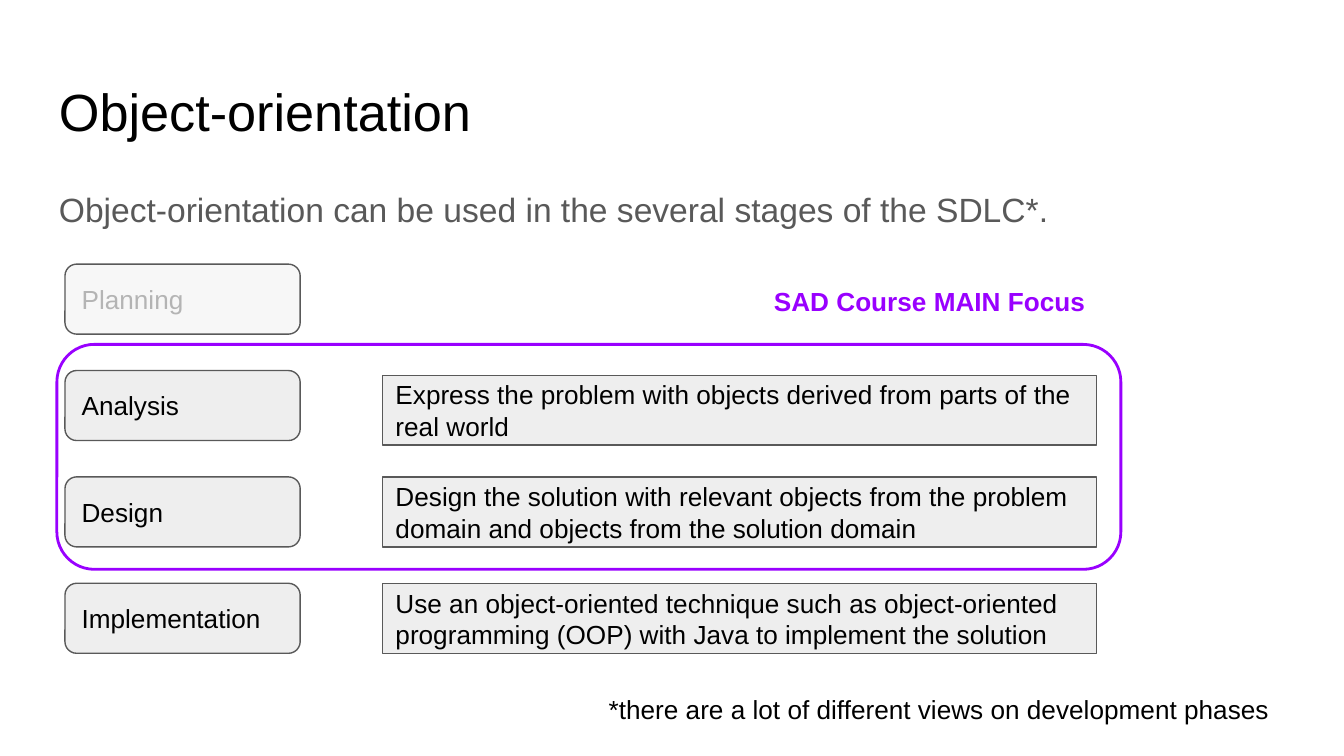
from lxml.etree import SubElement
from pptx import Presentation
from pptx.dml.color import RGBColor
from pptx.enum.shapes import MSO_SHAPE
from pptx.enum.text import MSO_ANCHOR
from pptx.oxml.ns import qn
from pptx.util import Pt

COLORS = {
    "text": "000000",
    "body": "595959",
    "faded": "B4B4B4",
    "fill": "EEEEEE",
    "line": "595959",
    "focus": "9900FF",
}
FRAME = {
    "word_wrap": True,
    "margin_left": Pt(7.2),
    "margin_right": Pt(7.2),
    "margin_top": Pt(7.2),
    "margin_bottom": Pt(7.2),
}
STAGES = [
    ("Planning", None, 0),
    ("Analysis", "Express the problem with objects derived from parts of the real world", 2.5),
    ("Design", "Design the solution with relevant objects from the problem domain "
     "and objects from the solution domain", 0),
    ("Implementation", "Use an object-oriented technique such as object-oriented "
     "programming (OOP) with Java to implement the solution", 0),
]
STAGE_H = 37.5
STAGE_PITCH = 57


def rgb(name):
    return RGBColor.from_string(COLORS[name])


def write(sp, text, size=14, color="text", bold=False, anchor=MSO_ANCHOR.TOP, spacing=1.0):
    tf = sp.text_frame
    for name, value in {**FRAME, "vertical_anchor": anchor}.items():
        setattr(tf, name, value)
    p = tf.paragraphs[0]
    p.line_spacing = spacing
    r = p.add_run()
    r.text = text
    for name, value in {"name": "Arial", "size": Pt(size), "bold": bold}.items():
        setattr(r.font, name, value)
    r.font.color.rgb = rgb(color)


def add_text(s, box, text, **style):
    sp = s.shapes.add_textbox(*map(Pt, box))
    write(sp, text, **style)


def add_box(s, kind, box, fill="fill", line="line", width=0.75):
    sp = s.shapes.add_shape(kind, *map(Pt, box))
    sp.shadow.inherit = False
    if fill:
        sp.fill.solid()
        sp.fill.fore_color.rgb = rgb(fill)
    else:
        sp.fill.background()
    sp.line.color.rgb = rgb(line)
    sp.line.width = Pt(width)
    return sp


def add_label(s, kind, box, text, color="text"):
    sp = add_box(s, kind, box)
    write(sp, text, color=color, anchor=MSO_ANCHOR.MIDDLE)
    sp.text_frame.paragraphs[0].alignment = 1
    return sp


def fade(sp, percent):
    clr = sp.fill._xPr.find(qn("a:solidFill"))[0]
    SubElement(clr, qn("a:alpha"), val=str(percent * 1000))


def add_heading(s, left, top, width):
    add_text(s, (left, top, width, 45), "Object-orientation", size=28)
    add_text(s, (left, top + 55.5, width, 40),
             "Object-orientation can be used in the several stages of the SDLC*.",
             size=18, color="body", spacing=1.15)


def add_stages(s, left, top):
    for i, (name, description, drop) in enumerate(STAGES):
        y = top + i * STAGE_PITCH
        color = "text" if description else "faded"
        sp = add_label(s, MSO_SHAPE.ROUNDED_RECTANGLE, (left, y, 126, STAGE_H), name, color)
        if description:
            add_label(s, MSO_SHAPE.RECTANGLE, (left + 170, y + drop, 382.5, STAGE_H), description)
        else:
            fade(sp, 44)


def add_focus(s, left, top, width, height):
    add_box(s, MSO_SHAPE.ROUNDED_RECTANGLE, (left, top, width, height),
            fill=None, line="focus", width=1.5)
    add_text(s, (left + 377, top - 39, 194, 29.5), "SAD Course MAIN Focus",
             color="focus", bold=True)


def add_footnote(s, left, top, width):
    add_text(s, (left, top, width, 40),
             "*there are a lot of different views on development phases")


def main():
    prs = Presentation()
    prs.slide_width, prs.slide_height = Pt(720), Pt(405)
    s = prs.slides.add_slide(prs.slide_layouts[6])
    add_heading(s, 24.5, 35, 671)
    add_stages(s, 34.8, 141.5)
    add_focus(s, 30.5, 184.5, 570, 120.5)
    add_footnote(s, 319, 364.5, 401)
    prs.save("out.pptx")


if __name__ == "__main__":
    main()
